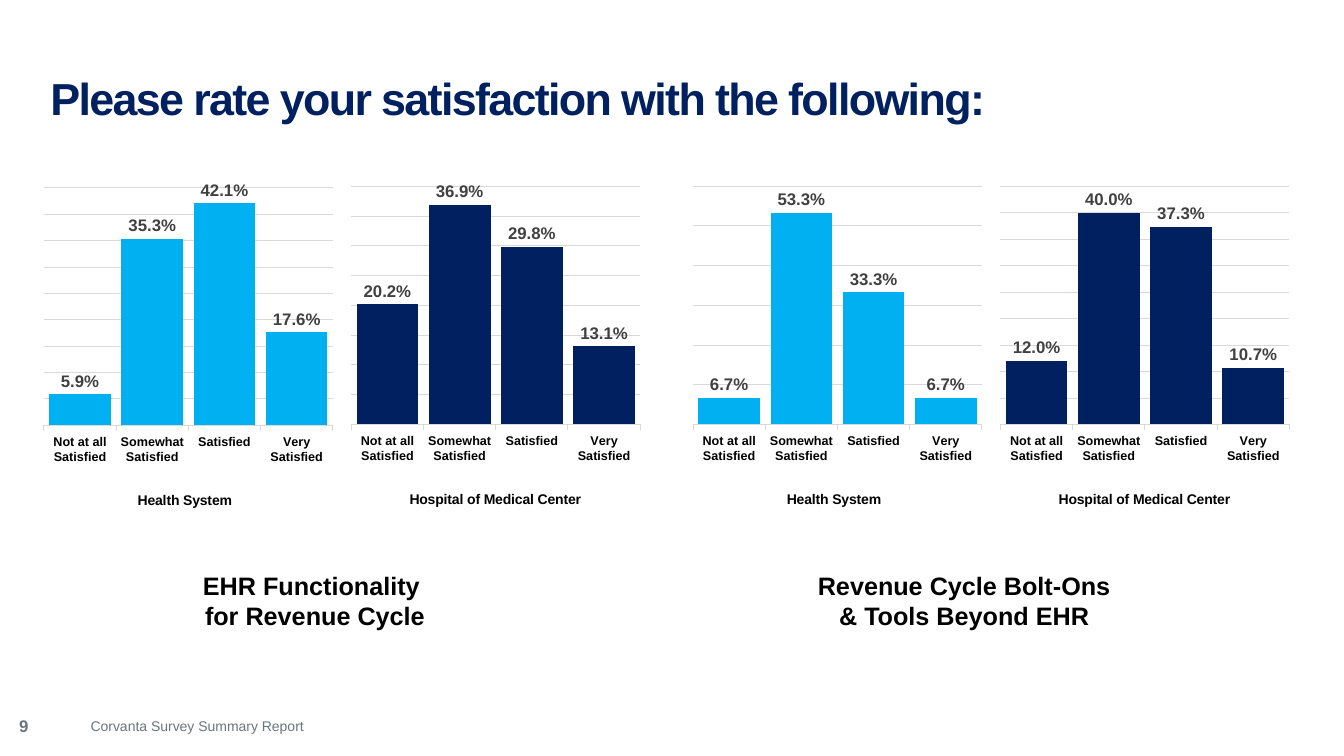
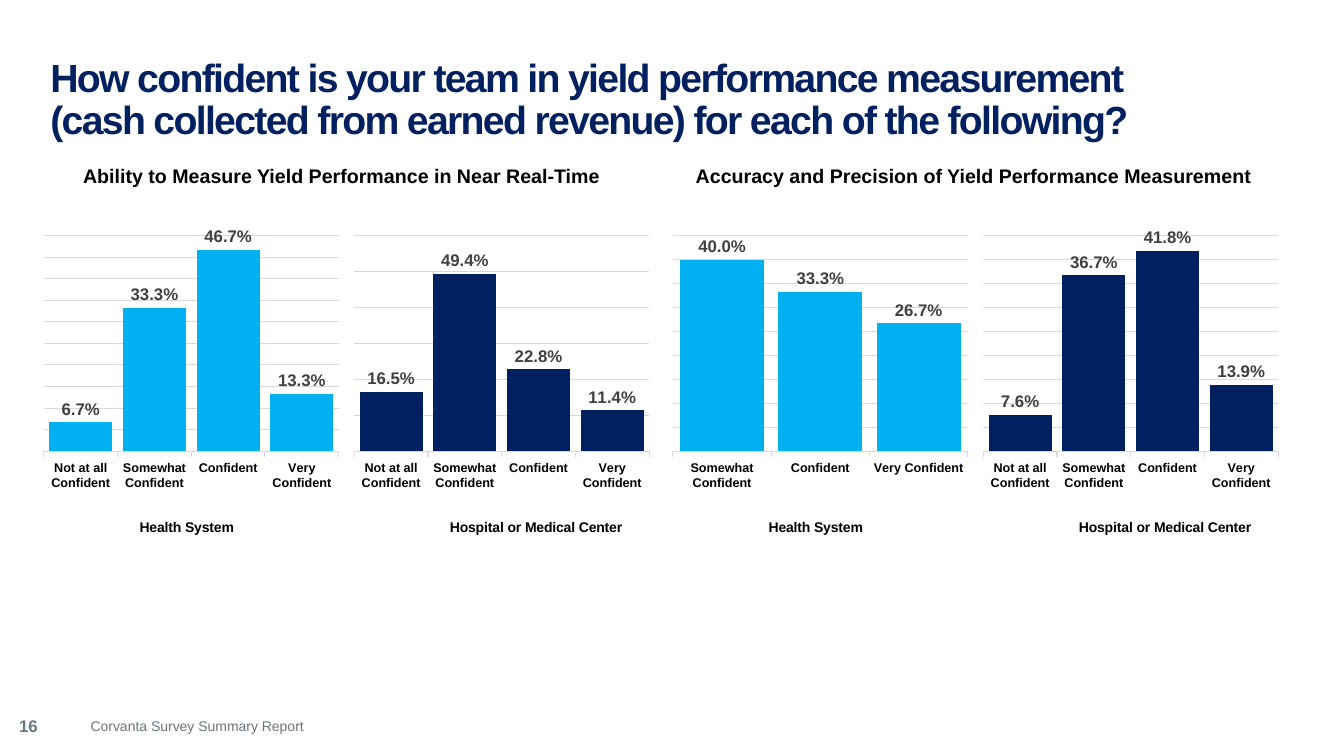
from lxml import etree
from pptx import Presentation
from pptx.chart.data import CategoryChartData
from pptx.dml.color import RGBColor
from pptx.enum.chart import XL_CHART_TYPE, XL_LABEL_POSITION, XL_TICK_MARK
from pptx.enum.text import MSO_ANCHOR, PP_ALIGN
from pptx.oxml.ns import qn
from pptx.util import Pt

NAVY = RGBColor(0x00, 0x20, 0x60)
SKY = RGBColor(0x00, 0xB0, 0xF0)
BLACK = RGBColor(0x00, 0x00, 0x00)
DARK = RGBColor(0x40, 0x40, 0x40)
SLATE = RGBColor(0x69, 0x76, 0x7D)
RULE = RGBColor(0xD9, 0xD9, 0xD9)
FACE = "Arial"

COLUMN = XL_CHART_TYPE.COLUMN_CLUSTERED
OUTER = XL_LABEL_POSITION.OUTSIDE_END
NONE, TICK = XL_TICK_MARK.NONE, XL_TICK_MARK.OUTSIDE
LEFT, CENTER = PP_ALIGN.LEFT, PP_ALIGN.CENTER
TOP, MIDDLE = MSO_ANCHOR.TOP, MSO_ANCHOR.MIDDLE

# Each chart: values, axis maximum, gridline step
PAGES = [
    {
        "number": "9",
        "title": "Please rate your satisfaction with the following:",
        "size": 32,
        "cats": ["Not at all Satisfied", "Somewhat Satisfied",
                 "Satisfied", "Very Satisfied"],
        "groups": [("Health System", SKY, 0.32),
                   ("Hospital of Medical Center", NAVY, 0.2)],
        "lefts": [28.8, 492.5], "step": 219.6, "top": 129.6, "width": 211.7,
        "plot": (0.011, 0.536),
        "heads": [("EHR Functionality \vfor Revenue Cycle", 114.5),
                  ("Revenue Cycle Bolt-Ons & Tools Beyond EHR", 578.2)],
        "head": {"top": 407.5, "width": 221, "size": 18, "space": 1},
        "charts": [
            ((0.059, 0.353, 0.421, 0.176), 0.45, 0.05),
            ((0.202, 0.369, 0.298, 0.131), 0.4, 0.05),
            ((0.067, 0.533, 0.333, 0.067), 0.6, 0.1),
            ((0.12, 0.4, 0.373, 0.107), 0.45, 0.05),
        ],
    },
    {
        "number": "16",
        "title": "How confident is your team in yield performance measurement "
                 "\v(cash collected from earned revenue) for each of the following?",
        "size": 28,
        "cats": ["Not at all Confident", "Somewhat Confident",
                 "Confident", "Very Confident"],
        "groups": [("Health System", SKY, 0.32),
                   ("Hospital or Medical Center", NAVY, 0.32)],
        "lefts": [28.8, 478.1], "step": 221.7, "top": 149, "width": 216,
        "plot": (0.061, 0.485),
        "heads": [("Ability to Measure Yield Performance in Near Real-Time", 28.8),
                  ("Accuracy and Precision of Yield Performance Measurement", 480.2)],
        "head": {"top": 118.8, "width": 430.6, "size": 14, "space": 0.9},
        "charts": [
            ((0.067, 0.333, 0.467, 0.133), 0.5, 0.05),
            ((0.165, 0.494, 0.228, 0.114), 0.6, 0.1),
            ((0.4, 0.333, 0.267), 0.45, 0.05),
            ((0.076, 0.367, 0.418, 0.139), 0.45, 0.05),
        ],
    },
]


def write(slide, text, box, size, color, bold=True, align=LEFT,
          inset=(0, 0), anchor=TOP, space=1):
    shape = slide.shapes.add_textbox(*map(Pt, box))
    frame = shape.text_frame
    frame.word_wrap = True
    frame.vertical_anchor = anchor
    frame.margin_left = frame.margin_right = Pt(inset[0])
    frame.margin_top = frame.margin_bottom = Pt(inset[1])
    para = frame.paragraphs[0]
    para.text = text
    para.alignment = align
    para.line_spacing = space
    font = para.font
    font.name, font.size, font.bold = FACE, Pt(size), bold
    font.color.rgb = color
    return para


def place(parent, index, **parts):
    """Give a chart part a manual layout, in fractions of the chart."""
    for old in parent.findall(qn("c:layout")):
        parent.remove(old)
    layout = etree.Element(qn("c:layout"))
    manual = etree.SubElement(layout, qn("c:manualLayout"))
    for tag, val in parts.items():
        etree.SubElement(manual, qn("c:" + tag)).set("val", str(val))
    parent.insert(index, layout)


deck = Presentation()
deck.slide_width, deck.slide_height = Pt(960), Pt(540)

for page in PAGES:
    slide = deck.slides.add_slide(deck.slide_layouts[6])
    write(slide, page["number"], (6.5, 507.6, 32.4, 21.6), 12, SLATE,
          inset=(7.2, 3.6))
    write(slide, "Corvanta Survey Summary Report", (57.6, 509, 702, 19.4), 10,
          SLATE, bold=False, inset=(7.2, 3.6))
    title = write(slide, page["title"], (36, 36, 885.6, 72), page["size"], NAVY,
                  anchor=MIDDLE, space=0.9)
    for run in title.runs:
        run.font._element.set("spc", "-120")

    head = page["head"]
    for text, left in page["heads"]:
        write(slide, text, (left, head["top"], head["width"], 24), head["size"],
              BLACK, align=CENTER, space=head["space"])

    for i, (vals, high, unit) in enumerate(page["charts"]):
        pair, side = divmod(i, 2)
        group, color, shift = page["groups"][side]
        left = page["lefts"][pair] + side * page["step"]

        data = CategoryChartData(number_format="0.0%")
        data.categories = page["cats"][-len(vals):]
        data.add_series("Series 1", vals)
        chart = slide.shapes.add_chart(
            COLUMN, Pt(left), Pt(page["top"]), Pt(page["width"]), Pt(317.5),
            data).chart
        chart.has_legend = chart.has_title = False
        chart.font.name, chart.font.size = FACE, Pt(10)
        chart.font.color.rgb = BLACK

        plot = chart.plots[0]
        plot.vary_by_categories = False
        plot.gap_width, plot.overlap = 17, -27
        fill = plot.series[0].format.fill
        fill.solid()
        fill.fore_color.rgb = color
        plot.has_data_labels = True
        labels = plot.data_labels
        labels.show_value = True
        labels.position = OUTER
        labels.number_format, labels.number_format_is_linked = "0.0%", False
        font = labels.font
        font.name, font.size, font.bold = FACE, Pt(12), True
        font.color.rgb = DARK

        scale = chart.value_axis
        scale.visible = False
        scale.minimum_scale, scale.maximum_scale = 0, high
        scale.major_unit = unit
        axis = chart.category_axis
        axis.major_tick_mark, axis.minor_tick_mark = TICK, NONE
        for line in (scale.major_gridlines.format.line, axis.format.line):
            line.color.rgb = RULE
            line.width = Pt(0.75)
        font = axis.tick_labels.font
        font.name, font.size, font.bold = FACE, Pt(9), True
        font.color.rgb = BLACK

        name = axis.axis_title
        para = name.text_frame.paragraphs[0]
        para.text = group
        font = para.font
        font.name, font.size, font.bold = FACE, Pt(10), True
        font.color.rgb = BLACK
        place(name._element, 1, xMode="edge", yMode="edge", x=shift, y=0.69)

        top, tall = page["plot"]
        place(chart._chartSpace.chart.plotArea, 0, layoutTarget="inner",
              xMode="edge", yMode="edge", x=0.012, y=top, w=0.975, h=tall)

deck.save("out.pptx")
